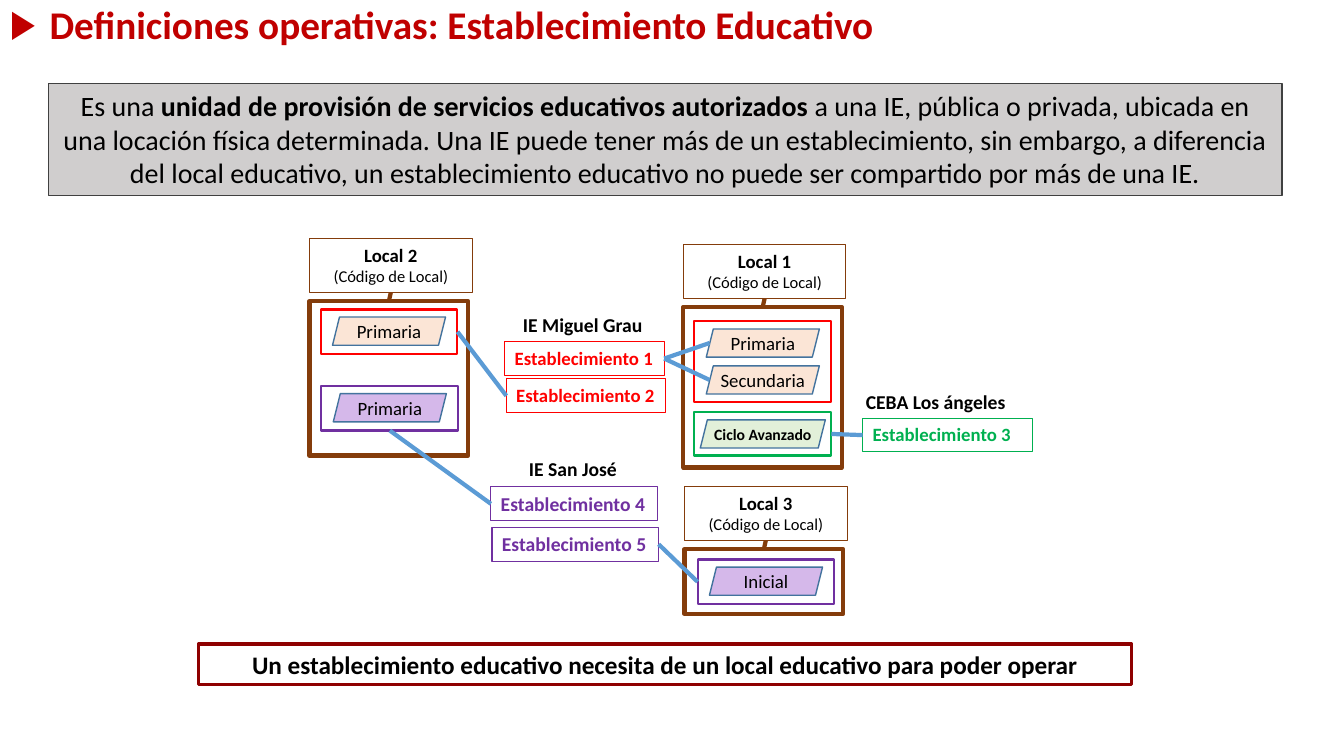
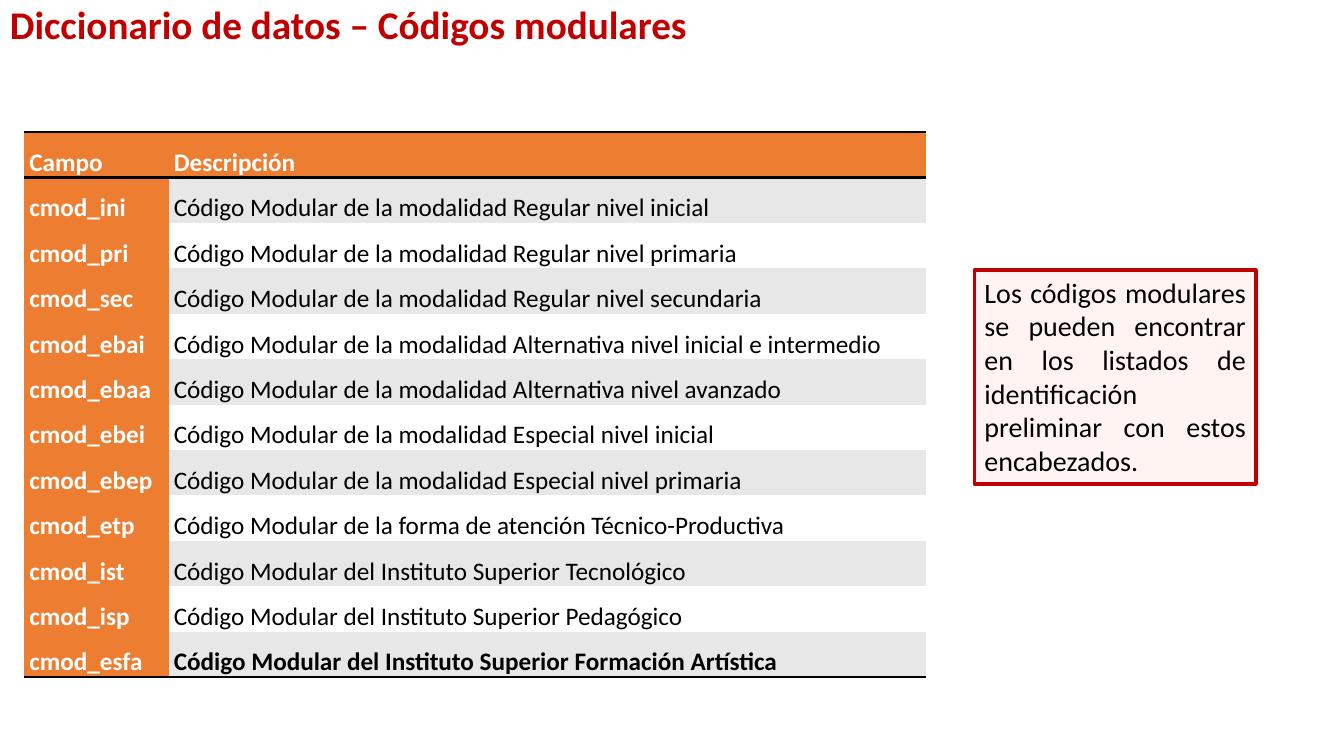
from lxml.etree import SubElement
from pptx import Presentation
from pptx.dml.color import RGBColor
from pptx.enum.shapes import MSO_CONNECTOR as Connector, MSO_SHAPE as Preset
from pptx.enum.text import MSO_ANCHOR as Anchor, PP_ALIGN as Align
from pptx.oxml.ns import qn
from pptx.util import Cm, Pt

FONT = "Calibri"
BLACK, WHITE = "000000", "FFFFFF"
CRIMSON, MAROON, BROWN = "C00000", "8E0000", "843C0B"
RED, GREEN, PURPLE = "FF0000", "00B050", "7030A0"
PEACH, MINT, LILAC = "FBE5D6", "E2F0D9", "D5B8EA"
BLUE, STEEL = "5B9BD5", "43739E"
ORANGE, BAND = "ED7D31", "E7E7E7"
NO_STYLE = "{2D5ABB26-0587-4C30-8999-92F81FD0307C}"
TOP, LEFT, BOTTOM, RIGHT = range(4)


def color(value):
    return RGBColor.from_string(value)


# Shared building blocks, all lengths in centimetres
def add_run(paragraph, text, size, bold=False, ink=BLACK):
    run = paragraph.add_run()
    run.text = text
    run.font.name, run.font.size, run.font.bold = FONT, Pt(size), bold
    run.font.color.rgb = color(ink)


def add_box(slide, box, line, weight, fill=None, preset=Preset.RECTANGLE):
    shape = slide.shapes.add_shape(preset, *map(Cm, box))
    shape.shadow.inherit = False
    if fill:
        shape.fill.solid()
        shape.fill.fore_color.rgb = color(fill)
    else:
        shape.fill.background()
    shape.line.color.rgb = color(line)
    shape.line.width = Pt(weight)
    return shape


def write(shape, paragraphs, align=Align.LEFT, anchor=Anchor.TOP):
    """Each paragraph is a list of (text, size, bold, ink) runs."""
    frame = shape.text_frame
    frame.word_wrap = True
    frame.vertical_anchor = anchor
    for index, runs in enumerate(paragraphs):
        paragraph = frame.add_paragraph() if index else frame.paragraphs[0]
        paragraph.alignment = align
        for run in runs:
            add_run(paragraph, *run)
    return frame


def add_label(slide, box, text, size, ink=BLACK, anchor=Anchor.TOP):
    shape = slide.shapes.add_textbox(*map(Cm, box))
    return write(shape, [[(text, size, True, ink)]], anchor=anchor)


def add_title(slide, text, bullet=None):
    frame = add_label(slide, (0, 0, 33.87, 1.35), text, 28, CRIMSON, Anchor.MIDDLE)
    paragraph = frame.paragraphs[0]
    paragraph.line_spacing = 0.9
    if bullet:
        properties = paragraph._p.get_or_add_pPr()
        properties.set("marL", str(Cm(1)))
        properties.set("indent", str(-Cm(1)))
        SubElement(properties, qn("a:buFont")).set("typeface", "Arial")
        SubElement(properties, qn("a:buChar")).set("char", bullet)


def connect(slide, start, start_side, end, end_side, ink=BLUE):
    """Join two rectangles; a side of None means end is a plain point."""
    x, y = end if end_side is None else (0, 0)
    line = slide.shapes.add_connector(Connector.STRAIGHT, 0, 0, x, y)
    line.begin_connect(start, start_side)
    if end_side is not None:
        line.end_connect(end, end_side)
    line.line.color.rgb = color(ink)
    line.line.width = Pt(3)
    SubElement(line._element.spPr, qn("a:effectLst"))


# Diagram regions
def add_local(slide, x, y, height, name):
    """Name plate above the thick frame of one school building."""
    frame = add_box(slide, (x, y + 1.57, 4, height), BROWN, 3)
    plate = add_box(slide, (x, y, 4.1, 1.35), BROWN, 0.75)
    write(plate, [[(name, 13.4, True)], [("(Código de Local)", 11.8)]], Align.CENTER)
    connect(slide, frame, TOP, plate, BOTTOM, BROWN)


def add_group(slide, x, y, height, line, fill, levels, size=13.4, bold=False, inset=0.3):
    """Outlined group with one slanted tile per level."""
    width = 3.45
    group = add_box(slide, (x, y, width, height), line, 1.5)
    tiles = []
    for index, level in enumerate(levels):
        tile_box = (x + inset, y + 0.19 + 0.93 * index, width - 2 * inset, 0.71)
        tile = add_box(slide, tile_box, STEEL, 1, fill, Preset.PARALLELOGRAM)
        frame = write(tile, [[(level, size, bold)]], Align.CENTER, Anchor.MIDDLE)
        frame.word_wrap = False
        frame.margin_left = frame.margin_right = 0
        frame.margin_top = frame.margin_bottom = 0
        tiles.append(tile)
    return group, tiles


def add_establishment(slide, x, y, width, number, ink, size=13.4):
    shape = add_box(slide, (x, y, width, 0.85), ink, 0.75)
    write(shape, [[(f"Establecimiento {number}", size, True, ink)]])
    return shape


def add_diagram(slide, x, y):
    # Buildings
    for left, top, height, name in (
        (0, 0, 3.89, "Local 2"),
        (9.42, 0.15, 4.04, "Local 1"),
        (9.45, 6.25, 1.63, "Local 3"),
    ):
        add_local(slide, x + left, y + top, height, name)

    # Groups inside the buildings
    primary, _ = add_group(slide, x + 0.28, y + 1.78, 1.12, RED, PEACH, ["Primaria"])
    san_jose, _ = add_group(slide, x + 0.3, y + 3.71, 1.12, PURPLE, LILAC, ["Primaria"])
    _, grau_tiles = add_group(slide, x + 9.7, y + 2.08, 2.03, RED, PEACH,
                              ["Primaria", "Secundaria"])
    advanced, _ = add_group(slide, x + 9.7, y + 4.37, 1.09, GREEN, MINT,
                            ["Ciclo Avanzado"], 11.2, True, 0.15)
    initial, _ = add_group(slide, x + 9.78, y + 8.08, 1.12, PURPLE, LILAC, ["Inicial"])

    # Institutions and their establishments
    for left, top, width, name in (
        (5.13, 1.73, 3.6, "IE Miguel Grau"),
        (13.77, 3.68, 4.1, "CEBA Los ángeles"),
        (5.28, 5.36, 2.8, "IE San José"),
    ):
        add_label(slide, (x + left, y + top, width, 0.86), name, 14)
    first, second, third, fourth, fifth = [
        add_establishment(slide, x + left, y + top, width, number, ink, size)
        for number, (left, top, width, ink, size) in enumerate((
            (4.92, 2.59, 4.02, RED, 13.4),
            (4.96, 3.53, 4.02, RED, 13.4),
            (13.94, 4.52, 4.29, GREEN, 13.4),
            (4.57, 6.25, 4.2, PURPLE, 14),
            (4.6, 7.27, 4.2, PURPLE, 14),
        ), start=1)
    ]

    # Links
    for tile in grau_tiles:
        edge = tile.left + Cm(0.08), tile.top + tile.height // 2
        connect(slide, first, RIGHT, edge, None)
    connect(slide, primary, RIGHT, second, LEFT)
    connect(slide, third, LEFT, advanced, RIGHT)
    connect(slide, san_jose, BOTTOM, fourth, LEFT)
    connect(slide, initial, LEFT, fifth, RIGHT)


def build_definition_slide(slide):
    add_title(slide, "Definiciones operativas: Establecimiento Educativo", "▶")
    definition = add_box(slide, (1.22, 2.11, 31.09, 2.82), "404040", 1, "D0CECE")
    write(definition, [[
        ("Es una ", 20),
        ("unidad de provisión de servicios educativos autorizados ", 20, True),
        ("a una IE, pública o privada, ubicada en una locación física determinada. "
         "Una IE puede tener más de un establecimiento, sin embargo, a diferencia del "
         "local educativo, un establecimiento educativo no puede ser compartido por "
         "más de una IE.", 20),
    ]], Align.CENTER)
    add_diagram(slide, 7.8, 6.02)
    conclusion = add_box(slide, (5, 16.23, 23.52, 1.02), MAROON, 2.25)
    write(conclusion, [[("Un establecimiento educativo necesita de un local educativo "
                         "para poder operar", 18, True)]], Align.CENTER)


# Dictionary table
FIELDS = (
    ("Campo", "Descripción"),
    ("cmod_ini", "Código Modular de la modalidad Regular nivel inicial"),
    ("cmod_pri", "Código Modular de la modalidad Regular nivel primaria"),
    ("cmod_sec", "Código Modular de la modalidad Regular nivel secundaria"),
    ("cmod_ebai", "Código Modular de la modalidad Alternativa nivel inicial e intermedio"),
    ("cmod_ebaa", "Código Modular de la modalidad Alternativa nivel avanzado"),
    ("cmod_ebei", "Código Modular de la modalidad Especial nivel inicial"),
    ("cmod_ebep", "Código Modular de la modalidad Especial nivel primaria"),
    ("cmod_etp", "Código Modular de la forma de atención Técnico-Productiva"),
    ("cmod_ist", "Código Modular del Instituto Superior Tecnológico"),
    ("cmod_isp", "Código Modular del Instituto Superior Pedagógico"),
    ("cmod_esfa", "Código Modular del Instituto Superior Formación Artística"),
)


def add_border(cell, side):
    line = SubElement(cell._tc.get_or_add_tcPr(), qn(f"a:{side}"), w=str(Pt(2)))
    fill = SubElement(line, qn("a:solidFill"))
    SubElement(fill, qn("a:srgbClr")).set("val", BLACK)


def fill_cell(cell, text, fill, ink, bold, anchor, borders):
    for side in borders:
        add_border(cell, side)
    cell.fill.solid()
    cell.fill.fore_color.rgb = color(fill)
    cell.margin_left = cell.margin_right = Cm(0.13)
    cell.margin_top = cell.margin_bottom = 0
    cell.vertical_anchor = anchor
    paragraph = cell.text_frame.paragraphs[0]
    paragraph.line_spacing = 1.5
    add_run(paragraph, text, 18, bold, ink)


def add_dictionary(slide, x, y, widths, row_height):
    rows = len(FIELDS)
    last = rows - 1
    frame = slide.shapes.add_table(rows, len(widths), Cm(x), Cm(y),
                                   Cm(sum(widths)), Cm(row_height * rows))
    table = frame.table
    table._tbl.tblPr.find(qn("a:tableStyleId")).text = NO_STYLE
    table.first_row = table.horz_banding = False
    for column, width in zip(table.columns, widths):
        column.width = Cm(width)
    for row, texts in enumerate(FIELDS):
        table.rows[row].height = Cm(row_height)
        anchor = Anchor.BOTTOM if row else Anchor.MIDDLE
        borders = {0: ("lnT", "lnB"), last: ("lnB",)}.get(row, ())
        for column, text in enumerate(texts):
            heading = row == 0 or column == 0
            fill = ORANGE if heading else BAND if row % 2 else WHITE
            fill_cell(table.cell(row, column), text, fill, WHITE if heading else BLACK,
                      heading or row == last, anchor, borders)


def build_dictionary_slide(slide):
    add_title(slide, "Diccionario de datos – Códigos modulares")
    add_dictionary(slide, 0.61, 3.33, (3.64, 19.08), 1.14)
    note = add_box(slide, (24.56, 6.81, 7.09, 5.38), CRIMSON, 2.75, "FFF4F1")
    write(note, [[("Los códigos modulares se pueden encontrar en los listados de "
                   "identificación preliminar con estos encabezados.", 20)]], Align.JUSTIFY)


def main():
    presentation = Presentation()
    presentation.slide_width, presentation.slide_height = Cm(33.87), Cm(19.05)
    for build in (build_definition_slide, build_dictionary_slide):
        build(presentation.slides.add_slide(presentation.slide_layouts[6]))
    presentation.save("out.pptx")


if __name__ == "__main__":
    main()
